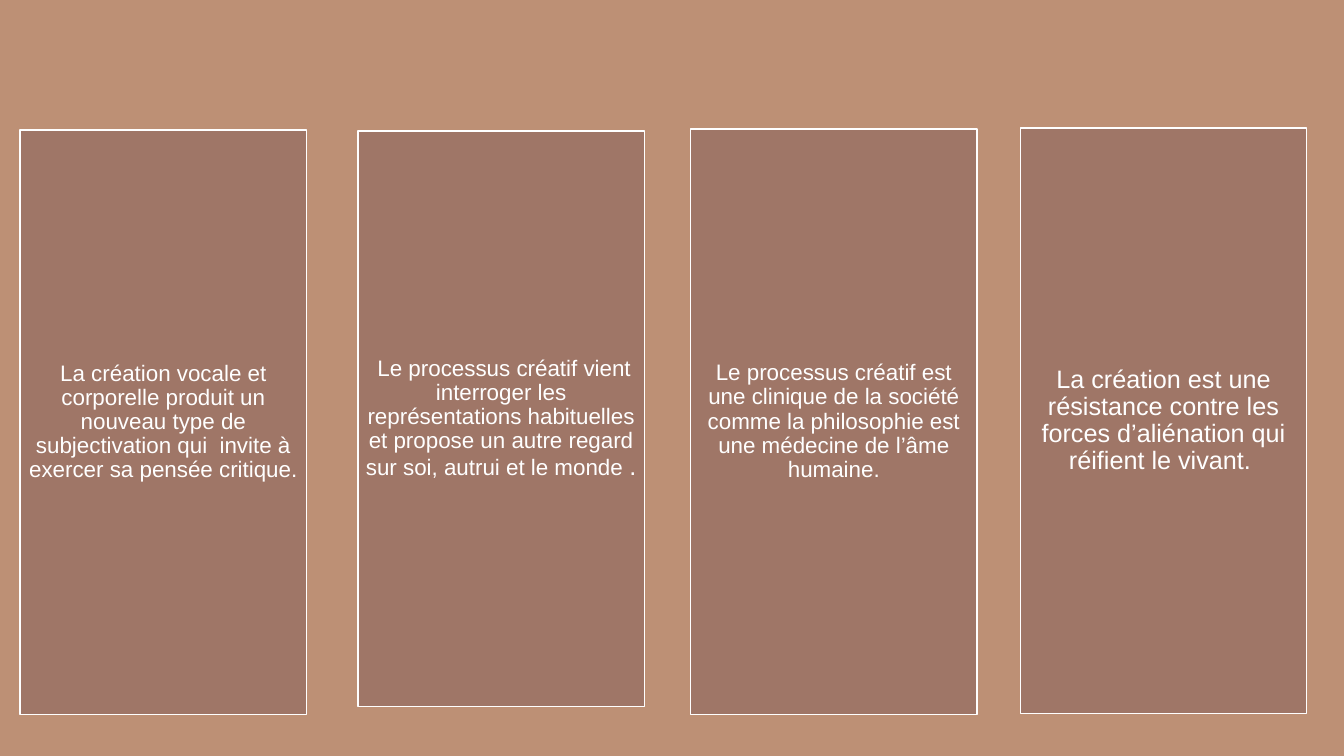
from dataclasses import dataclass

from pptx import Presentation
from pptx.dml.color import RGBColor
from pptx.enum.shapes import MSO_SHAPE
from pptx.enum.text import MSO_ANCHOR, PP_ALIGN
from pptx.slide import Slide
from pptx.util import Inches, Pt

BACKDROP = "BD9075"
PANEL = "9F7667"
WHITE = "FFFFFF"
PANEL_WIDTH = 2.84
INSET = Inches(0.07)
FRAME_FORMAT = {
    "word_wrap": True,
    "vertical_anchor": MSO_ANCHOR.MIDDLE,
    "margin_left": INSET,
    "margin_top": INSET,
    "margin_right": INSET,
    "margin_bottom": INSET,
}
PARAGRAPH_FORMAT = {"alignment": PP_ALIGN.CENTER, "line_spacing": 0.9}


@dataclass
class Phrase:
    wording: str
    size: int = 16


@dataclass
class Thesis:
    left: float
    top: float
    height: float
    phrases: list[Phrase]


THESES = [
    Thesis(0.2, 1.29, 5.8, [
        Phrase("La création vocale et corporelle produit un nouveau type de "
               "subjectivation qui  invite à exercer sa pensée critique."),
    ]),
    Thesis(3.55, 1.3, 5.71, [
        Phrase(" Le processus créatif vient interroger les représentations habituelles "
               "et propose un autre regard sur soi, autrui et le monde "),
        Phrase(".", 18),
    ]),
    Thesis(6.85, 1.28, 5.81, [
        Phrase("Le processus créatif est une clinique de la société comme la "
               "philosophie est une médecine de l’âme humaine."),
    ]),
    Thesis(10.12, 1.27, 5.81, [
        Phrase("La création est une résistance contre les forces d’aliénation "
               "qui réifient le vivant. ", 18),
    ]),
]


def color(code: str) -> RGBColor:
    """Turn a hex string into a colour."""
    return RGBColor.from_string(code)


def apply_format(target: object, values: dict[str, object]) -> None:
    """Set every named attribute on the target."""
    for name, value in values.items():
        setattr(target, name, value)


def draw_thesis(slide: Slide, thesis: Thesis) -> None:
    """Draw one outlined panel with its centred statement."""
    panel = slide.shapes.add_shape(
        MSO_SHAPE.RECTANGLE, Inches(thesis.left), Inches(thesis.top),
        Inches(PANEL_WIDTH), Inches(thesis.height))
    panel.shadow.inherit = False
    panel.fill.solid()
    panel.fill.fore_color.rgb = color(PANEL)
    panel.line.color.rgb = color(WHITE)
    panel.line.width = Pt(1)
    apply_format(panel.text_frame, FRAME_FORMAT)
    statement = panel.text_frame.paragraphs[0]
    apply_format(statement, PARAGRAPH_FORMAT)
    for phrase in thesis.phrases:
        run = statement.add_run()
        run.text = phrase.wording
        apply_format(run.font, {"name": "Arial", "size": Pt(phrase.size)})
        run.font.color.rgb = color(WHITE)


def main() -> None:
    """Build the slide and save it."""
    deck = Presentation()
    apply_format(deck, {"slide_width": Inches(13.33), "slide_height": Inches(7.5)})
    slide = deck.slides.add_slide(deck.slide_layouts[6])
    slide.background.fill.solid()
    slide.background.fill.fore_color.rgb = color(BACKDROP)
    for thesis in THESES:
        draw_thesis(slide, thesis)
    deck.save("out.pptx")


if __name__ == "__main__":
    main()
